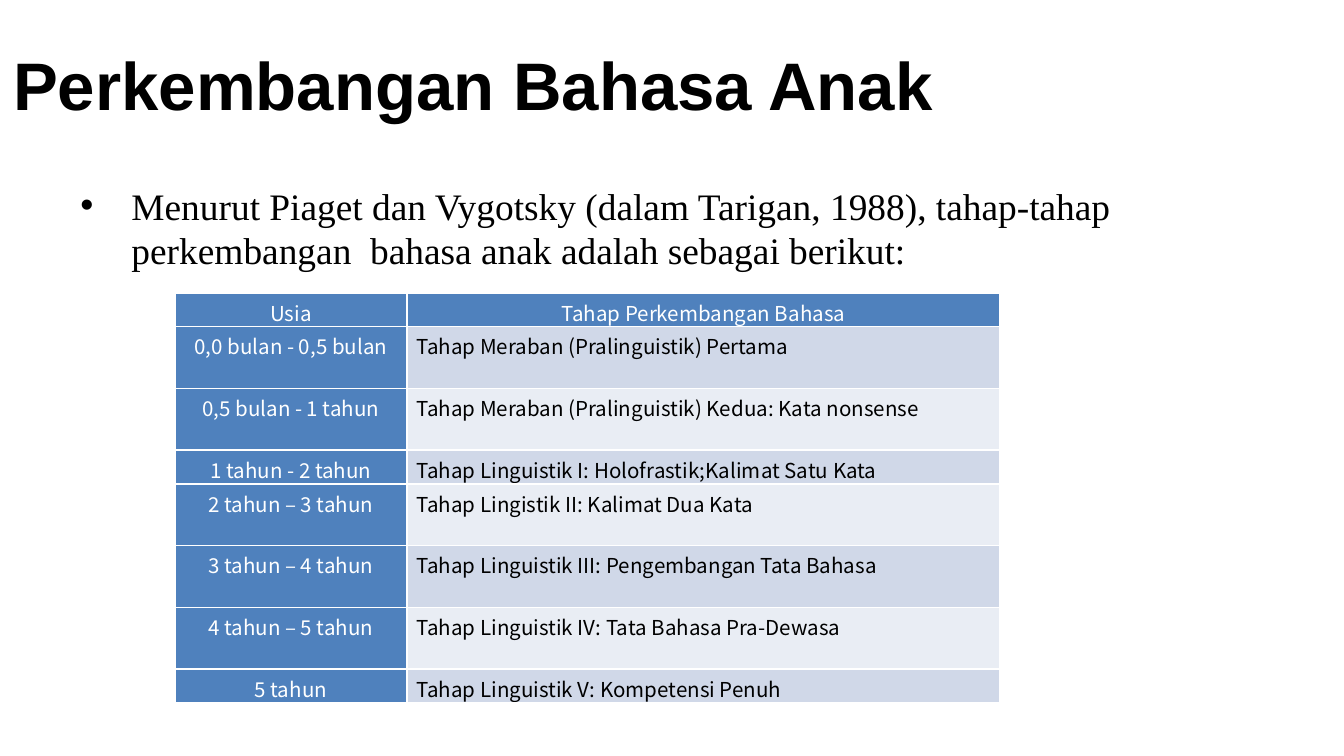
import dataclasses

import lxml.etree
import pptx
import pptx.dml.color
import pptx.enum.text
import pptx.oxml.ns
import pptx.util

Inches = pptx.util.Inches
Pt = pptx.util.Pt
Align = pptx.enum.text.PP_ALIGN
Anchor = pptx.enum.text.MSO_ANCHOR


@dataclasses.dataclass(frozen=True)
class Theme:
    black: str = "000000"
    white: str = "FFFFFF"
    accent: str = "4F81BD"
    bands: tuple = ("D0D8E8", "E9EDF4")
    title_font: str = "Arial"
    body_font: str = "Times New Roman"
    table_font: str = "Noto Sans CJK KR"
    title_size: int = 36
    body_size: int = 20
    table_size: int = 11


THEME = Theme()
TALL, SHORT = 0.46, 0.25
COLUMN_WIDTHS = (1.73, 4.41)
HEADER = ("Usia", "Tahap Perkembangan Bahasa")
STAGES = (
    ("0,0 bulan - 0,5 bulan", "Tahap Meraban (Pralinguistik) Pertama", TALL),
    ("0,5 bulan - 1 tahun", "Tahap Meraban (Pralinguistik) Kedua: Kata nonsense", TALL),
    ("1 tahun - 2 tahun", "Tahap Linguistik I: Holofrastik;Kalimat Satu Kata", SHORT),
    ("2 tahun – 3 tahun", "Tahap Lingistik II: Kalimat Dua Kata", TALL),
    ("3 tahun – 4 tahun", "Tahap Linguistik III: Pengembangan Tata Bahasa", TALL),
    ("4 tahun – 5 tahun", "Tahap Linguistik IV: Tata Bahasa Pra-Dewasa", TALL),
    ("5 tahun", "Tahap Linguistik V: Kompetensi Penuh", SHORT),
)


def rgb(color):
    return pptx.dml.color.RGBColor.from_string(color)


def add_element(parent, tag, **attributes):
    return lxml.etree.SubElement(parent, pptx.oxml.ns.qn(tag), attributes)


def set_font(paragraph, name, size, color, bold=False):
    font = paragraph.font
    font.name = name
    font.size = Pt(size)
    font.bold = bold
    font.color.rgb = rgb(color)


def add_text(slide, box, text, anchor):
    shape = slide.shapes.add_textbox(*(Inches(length) for length in box))
    frame = shape.text_frame
    frame.word_wrap = True
    frame.vertical_anchor = anchor
    frame.text = text
    return frame


def add_title(slide, box):
    frame = add_text(slide, box, "Perkembangan Bahasa Anak", Anchor.MIDDLE)
    set_font(frame.paragraphs[0], THEME.title_font, THEME.title_size, THEME.black, True)


def add_introduction(slide, box):
    text = (
        "Menurut Piaget dan Vygotsky (dalam Tarigan, 1988), tahap-tahap "
        "perkembangan  bahasa anak adalah sebagai berikut:"
    )
    frame = add_text(slide, box, text, Anchor.TOP)
    paragraph = frame.paragraphs[0]
    properties = paragraph._p.get_or_add_pPr()
    indent = Inches(0.38)
    properties.set("marL", str(indent))
    properties.set("indent", str(-indent))
    add_element(properties, "a:buFont", typeface="Arial")
    add_element(properties, "a:buChar", char="•")
    set_font(paragraph, THEME.body_font, THEME.body_size, THEME.black)


def set_borders(cell):
    properties = cell._tc.get_or_add_tcPr()
    for side in ("a:lnL", "a:lnR", "a:lnT", "a:lnB"):
        line = add_element(properties, side, w=str(Pt(1)))
        add_element(add_element(line, "a:solidFill"), "a:srgbClr", val=THEME.white)


def fill_cell(cell, text, fill, color, alignment):
    set_borders(cell)
    cell.fill.solid()
    cell.fill.fore_color.rgb = rgb(fill)
    cell.margin_left = cell.margin_right = Inches(0.07)
    cell.margin_top = cell.margin_bottom = 0
    cell.text = text
    paragraph = cell.text_frame.paragraphs[0]
    paragraph.alignment = alignment
    paragraph.line_spacing = 1.15
    set_font(paragraph, THEME.table_font, THEME.table_size, color)


def add_stage_table(slide, left, top):
    heights = (SHORT, *(height for _, _, height in STAGES))
    box = (left, top, sum(COLUMN_WIDTHS), sum(heights))
    shape = slide.shapes.add_table(
        len(heights), len(HEADER), *(Inches(length) for length in box)
    )
    table = shape.table
    for column, width in zip(table.columns, COLUMN_WIDTHS):
        column.width = Inches(width)
    for row, height in zip(table.rows, heights):
        row.height = Inches(height)
    for index, heading in enumerate(HEADER):
        fill_cell(table.cell(0, index), heading, THEME.accent, THEME.white, Align.CENTER)
    for index, (age, stage, _) in enumerate(STAGES):
        row = index + 1
        fill_cell(table.cell(row, 0), age, THEME.accent, THEME.white, Align.CENTER)
        fill_cell(table.cell(row, 1), stage, THEME.bands[index % 2], THEME.black, Align.LEFT)


def main():
    presentation = pptx.Presentation()
    presentation.slide_width = Inches(10)
    presentation.slide_height = presentation.slide_width * 9 // 16
    slide = presentation.slides.add_slide(presentation.slide_layouts[6])
    add_title(slide, (0, 0.15, 10, 0.94))
    add_introduction(slide, (0.5, 1.31, 9, 3.71))
    add_stage_table(slide, 1.3, 2.18)
    presentation.save("out.pptx")


if __name__ == "__main__":
    main()
